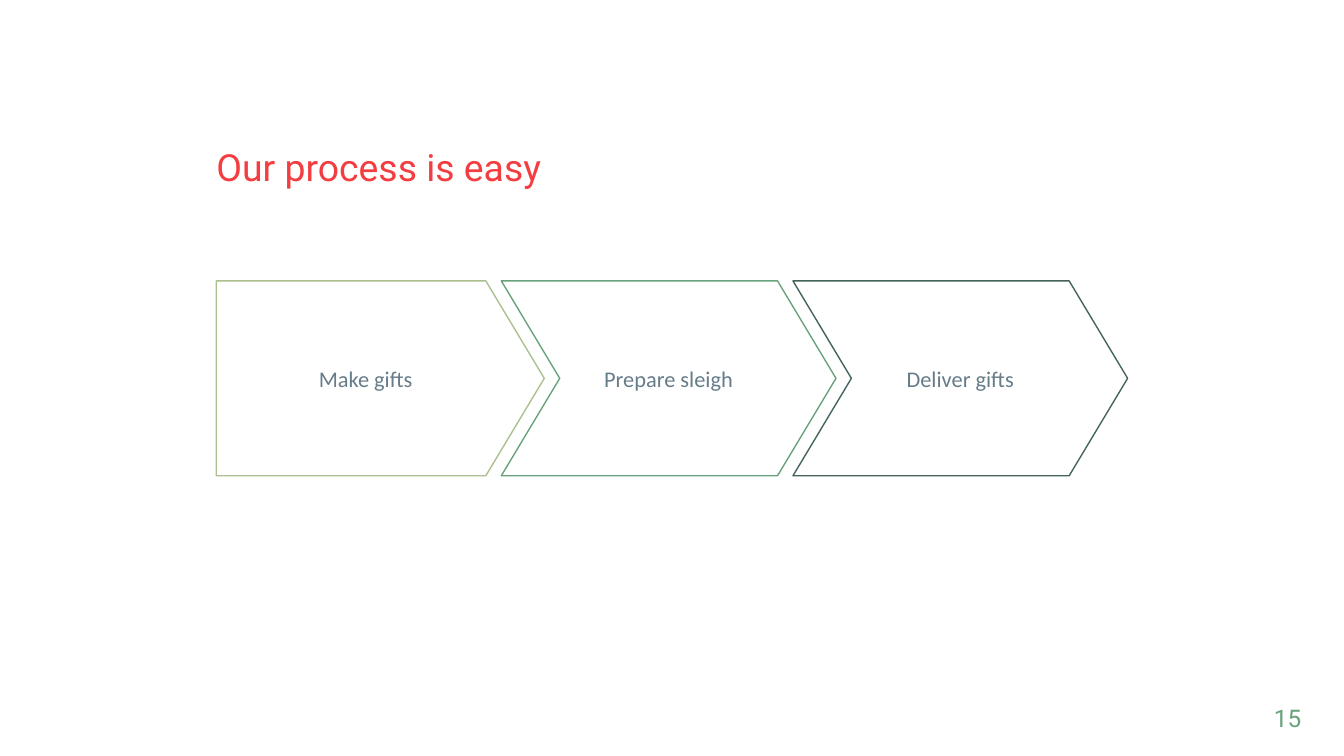
import pptx
import pptx.dml.color
import pptx.enum.shapes
import pptx.enum.text
import pptx.util

Inches = pptx.util.Inches
Pt = pptx.util.Pt
SHAPE = pptx.enum.shapes.MSO_SHAPE
ALIGN = pptx.enum.text.PP_ALIGN
ANCHOR = pptx.enum.text.MSO_ANCHOR

COLORS = {
    "title": "F33D41",
    "body": "667C89",
    "light": "ABC08E",
    "green": "68A27A",
    "dark": "43635C",
}
STEPS = [("Make gifts", "light"), ("Prepare sleigh", "green"), ("Deliver gifts", "dark")]
SLIDE_WIDTH = 10
LEFT, TOP, HEIGHT = 1.61, 2.09, 1.45
FIRST_WIDTH, CHEVRON_WIDTH = 2.44, 2.49
CHEVRON_LEFT, PITCH = 3.73, 2.17


def rgb(name):
    return pptx.dml.color.RGBColor.from_string(COLORS[name])


def write_text(sp, text, font, size, color, inset=0.1, align=ALIGN.LEFT,
               anchor=ANCHOR.MIDDLE, spacing=1.0):
    tf = sp.text_frame
    margin = Inches(inset)
    frame_format = {"margin_left": margin, "margin_right": margin,
                    "margin_top": margin, "margin_bottom": margin,
                    "word_wrap": True, "vertical_anchor": anchor}
    for key, value in frame_format.items():
        setattr(tf, key, value)
    p = tf.paragraphs[0]
    p.alignment, p.line_spacing = align, spacing
    r = p.add_run()
    r.text = text
    for key, value in {"name": font, "size": Pt(size), "bold": False}.items():
        setattr(r.font, key, value)
    r.font.color.rgb = rgb(color)


def add_title(s, text):
    sp = s.shapes.title
    box = {"left": LEFT, "top": 1.01, "width": 6.77, "height": 0.5}
    for key, value in box.items():
        setattr(sp, key, Inches(value))
    write_text(sp, text, "Roboto", 20, "title", inset=0, spacing=0.9)


def add_step(s, index, text, color):
    """Draw one step: a pentagon for the first, chevrons after it."""
    if index == 0:
        kind, left, width = SHAPE.PENTAGON, LEFT, FIRST_WIDTH
    else:
        kind, width = SHAPE.CHEVRON, CHEVRON_WIDTH
        left = CHEVRON_LEFT + (index - 1) * PITCH
    sp = s.shapes.add_shape(kind, Inches(left), Inches(TOP), Inches(width), Inches(HEIGHT))
    sp.adjustments[0] = 0.3
    sp.shadow.inherit = False
    sp.fill.background()
    sp.line.color.rgb = rgb(color)
    sp.line.width = Pt(0.75)
    write_text(sp, text, "Calibri", 12, "body", align=ALIGN.CENTER)


def add_page_number(s, number):
    sp = s.shapes.add_textbox(Inches(9.18), Inches(5.13), Inches(0.6), Inches(0.29))
    write_text(sp, number, "Roboto", 13, "green", align=ALIGN.RIGHT, anchor=ANCHOR.TOP)


def main():
    prs = pptx.Presentation()
    prs.slide_width = Inches(SLIDE_WIDTH)
    prs.slide_height = Inches(SLIDE_WIDTH * 9 / 16)
    s = prs.slides.add_slide(prs.slide_layouts.get_by_name("Title Only"))
    add_title(s, "Our process is easy")
    for index, (text, color) in enumerate(STEPS):
        add_step(s, index, text, color)
    add_page_number(s, "15")
    prs.save("out.pptx")


if __name__ == "__main__":
    main()
